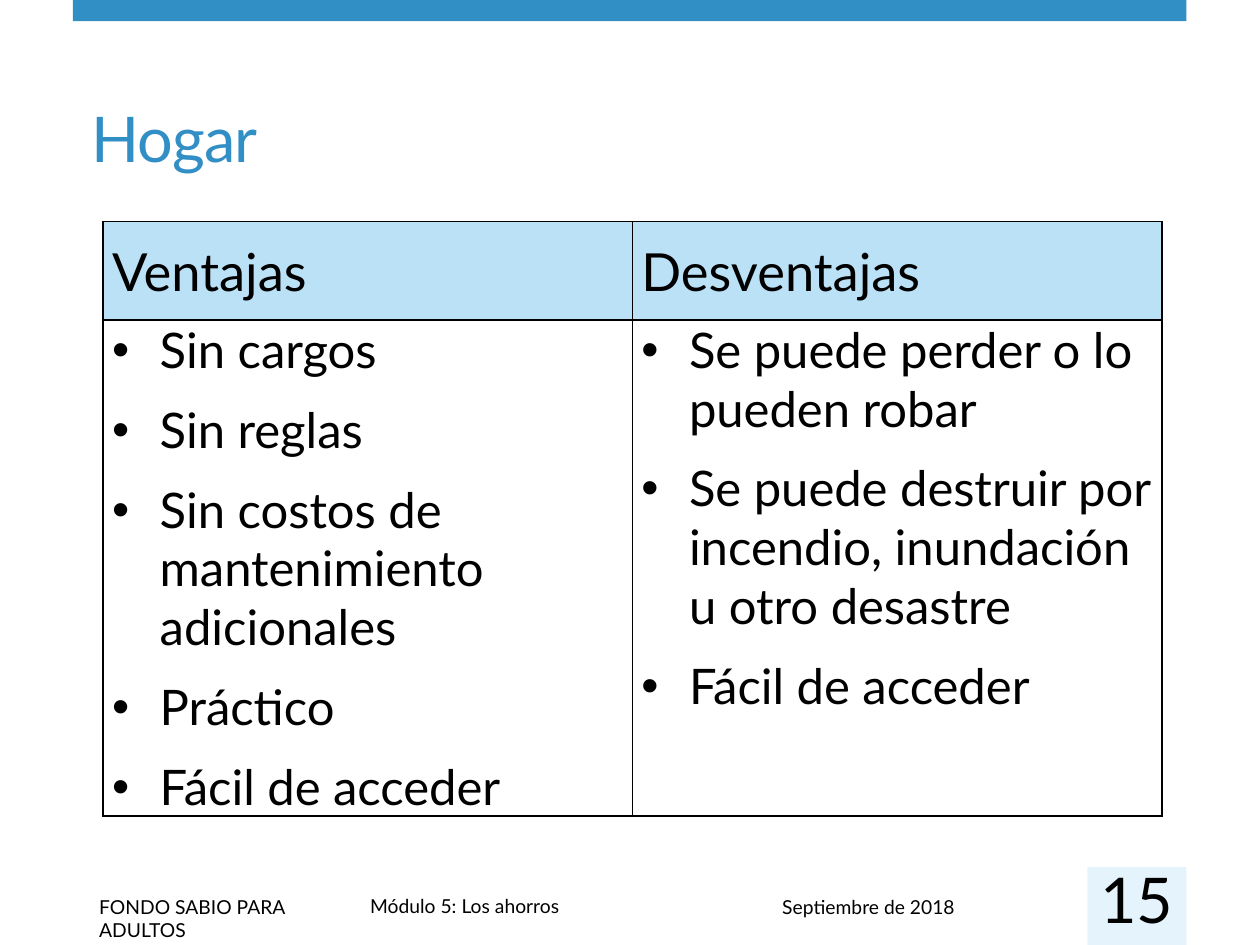
from dataclasses import dataclass

from lxml.etree import SubElement
from pptx import Presentation
from pptx.dml.color import RGBColor as RGB
from pptx.enum.shapes import MSO_SHAPE as Preset
from pptx.enum.text import MSO_ANCHOR as Anchor, PP_ALIGN as Align
from pptx.oxml.ns import qn
from pptx.util import Cm, Pt


@dataclass(frozen=True)
class Theme:
    font: str = "Lato"
    accent: RGB = RGB(0x31, 0x8F, 0xC5)
    header: RGB = RGB(0x76, 0xC5, 0xEF)
    pale: RGB = RGB(0xE4, 0xF3, 0xFC)
    ink: RGB = RGB(0, 0, 0)
    title_size: int = 36
    header_size: int = 30
    body_size: int = 28
    footer_size: int = 11


THEME = Theme()

COLUMNS = {
    "Ventajas": [
        "Sin cargos",
        "Sin reglas",
        "Sin costos de mantenimiento adicionales",
        "Práctico",
        "Fácil de acceder",
    ],
    "Desventajas": [
        "Se puede perder o lo pueden robar",
        "Se puede destruir por incendio, inundación u otro desastre",
        "Fácil de acceder",
    ],
}

# Text, left, top, width
FOOTERS = [
    ("FONDO SABIO PARA ADULTOS", 1.75, 17.93, 5.31),
    ("Módulo 5: Los ahorros", 7.21, 17.91, 14.38),
    ("Septiembre de 2018", 15.52, 17.93, 6.4),
]


def apply(target, formats):
    for name, value in formats.items():
        setattr(target, name, value)


def write(paragraph, text, size, color=THEME.ink):
    run = paragraph.add_run()
    run.text = text
    apply(run.font, {"name": THEME.font, "size": Pt(size)})
    run.font.color.rgb = color
    return run


def add_block(slide, color, left, top, width, height):
    block = slide.shapes.add_shape(
        Preset.RECTANGLE, Cm(left), Cm(top), Cm(width), Cm(height))
    block.shadow.inherit = False
    block.fill.solid()
    block.fill.fore_color.rgb = color
    block.line.fill.background()


def add_label(slide, text, size, box, color=THEME.ink, align=Align.LEFT,
              **frame_formats):
    label = slide.shapes.add_textbox(*(Cm(length) for length in box))
    frame = label.text_frame
    apply(frame, {"word_wrap": True, **frame_formats})
    frame.paragraphs[0].alignment = align
    return write(frame.paragraphs[0], text, size, color)


def add_borders(cell):
    properties = cell._tc.get_or_add_tcPr()
    for side in ("lnL", "lnR", "lnT", "lnB"):
        border = SubElement(properties, qn(f"a:{side}"), w=str(Pt(1)))
        solid = SubElement(border, qn("a:solidFill"))
        SubElement(solid, qn("a:srgbClr"), val=str(THEME.ink))


def format_cell(cell, anchor):
    apply(cell, {
        "margin_left": Cm(0.18), "margin_right": Cm(0.18),
        "margin_top": 0, "margin_bottom": 0, "vertical_anchor": anchor,
    })
    add_borders(cell)


def fill_header(cell, heading):
    format_cell(cell, Anchor.MIDDLE)
    cell.fill.solid()
    cell.fill.fore_color.rgb = THEME.header
    tint = cell._tc.tcPr.find(f"{qn('a:solidFill')}/{qn('a:srgbClr')}")
    SubElement(tint, qn("a:alpha"), val="50000")
    paragraph = cell.text_frame.paragraphs[0]
    paragraph.space_after = Pt(12)
    write(paragraph, heading, THEME.header_size)


def add_bullet(paragraph):
    indent = Cm(0.96)
    properties = paragraph._p.get_or_add_pPr()
    apply_xml = {"marL": indent, "indent": -indent}
    for name, value in apply_xml.items():
        properties.set(name, str(value))
    SubElement(properties, qn("a:buFont"), typeface="Arial")
    SubElement(properties, qn("a:buChar"), char="•")
    tabs = SubElement(properties, qn("a:tabLst"))
    SubElement(tabs, qn("a:tab"), pos=str(Cm(1.27)), algn="l")


def fill_points(cell, points):
    format_cell(cell, Anchor.TOP)
    cell.fill.background()
    frame = cell.text_frame
    for index, point in enumerate(points):
        paragraph = frame.add_paragraph() if index else frame.paragraphs[0]
        add_bullet(paragraph)
        apply(paragraph, {"space_before": Pt(6 if index else 0),
                          "space_after": Pt(6)})
        write(paragraph, point, THEME.body_size)


def add_comparison(slide):
    column_width, row_heights = Cm(10.67), (Cm(1.98), Cm(10))
    table = slide.shapes.add_table(
        2, len(COLUMNS), Cm(2.08), Cm(4.47),
        column_width * len(COLUMNS), sum(row_heights)).table
    apply(table, {"first_row": False, "horz_banding": False})
    for row, height in zip(table.rows, row_heights):
        row.height = height
    for index, (heading, points) in enumerate(COLUMNS.items()):
        table.columns[index].width = column_width
        fill_header(table.cell(0, index), heading)
        fill_points(table.cell(1, index), points)


def main():
    deck = Presentation()
    apply(deck, {"slide_width": Cm(25.4), "slide_height": Cm(19.05)})
    slide = deck.slides.add_slide(deck.slide_layouts[6])

    # Top band and footer
    add_block(slide, THEME.accent, 1.47, 0, 22.45, 0.43)
    for text, left, top, width in FOOTERS:
        add_label(slide, text, THEME.footer_size, (left, top, width, 0.74))
    add_block(slide, THEME.pale, 21.92, 17.48, 2, 1.57)

    # Title
    title = add_label(slide, "Hogar", THEME.title_size, (1.6, 1.22, 20.83, 2.44),
                      THEME.accent, vertical_anchor=Anchor.BOTTOM)
    title.font._element.set("spc", "-60")

    # Pros and cons
    add_comparison(slide)

    # Page number
    add_label(slide, "15", THEME.title_size, (21.92, 17.35, 2, 1.14),
              align=Align.CENTER, margin_left=0, margin_right=0,
              margin_top=0, margin_bottom=0)

    deck.save("out.pptx")


if __name__ == "__main__":
    main()
